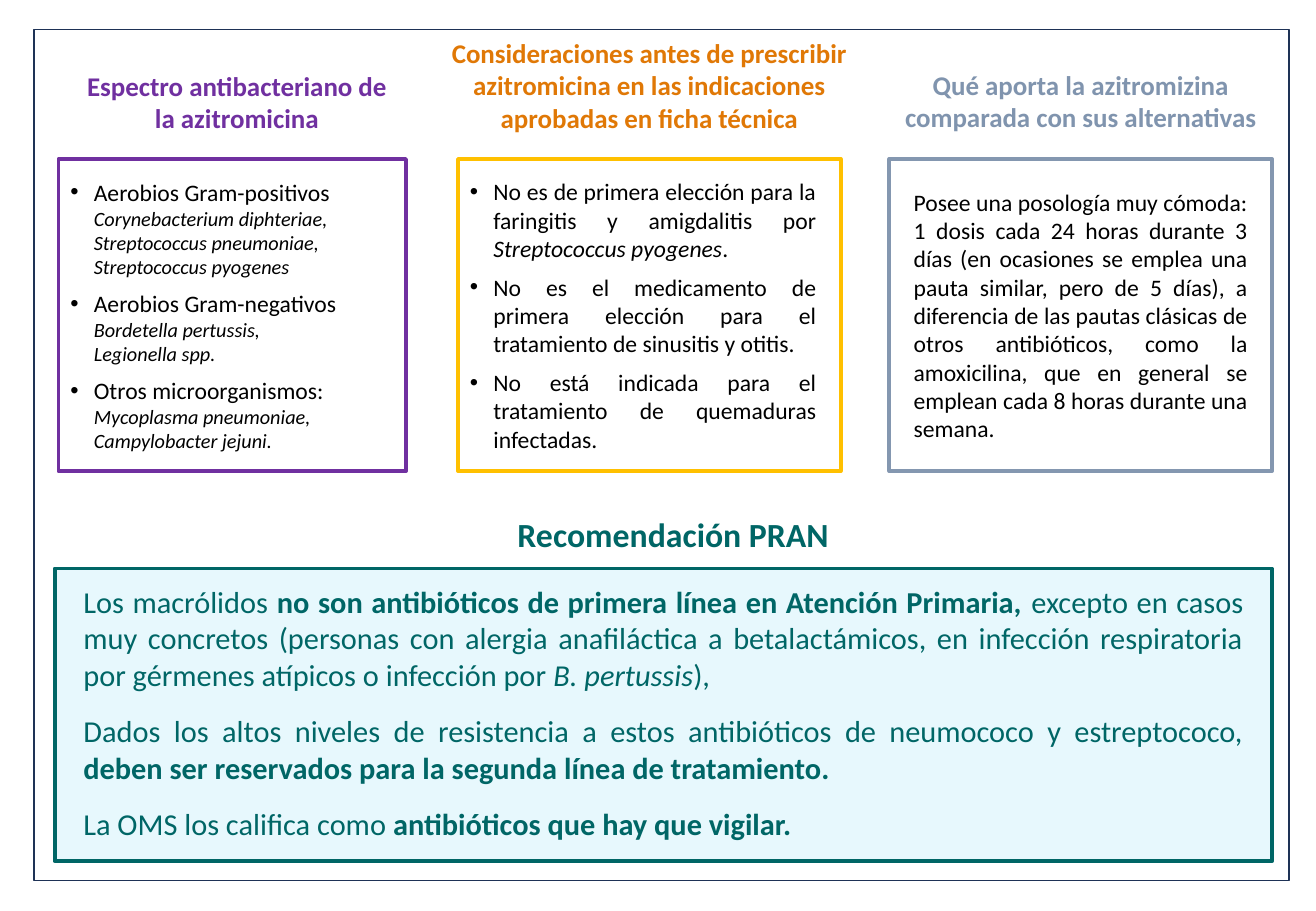
from dataclasses import dataclass

from lxml.etree import SubElement
from pptx import Presentation
from pptx.dml.color import RGBColor
from pptx.enum.shapes import MSO_SHAPE as Shape
from pptx.enum.text import MSO_ANCHOR as Anchor, MSO_AUTO_SIZE as AutoSize, PP_ALIGN as Align
from pptx.oxml.ns import qn
from pptx.util import Pt

WHITE = RGBColor(0xFF, 0xFF, 0xFF)
BLACK = RGBColor(0x00, 0x00, 0x00)
NAVY = RGBColor(0x1E, 0x32, 0x56)
TEAL = RGBColor(0x00, 0x66, 0x66)
PALE_BLUE = RGBColor(0xE7, 0xF8, 0xFD)
PURPLE = RGBColor(0x70, 0x30, 0xA0)
GOLD = RGBColor(0xFF, 0xC0, 0x00)
ORANGE = RGBColor(0xE0, 0x78, 0x06)
GREY_BLUE = RGBColor(0x84, 0x97, 0xB0)
GREY_TITLE = RGBColor(0x80, 0x94, 0xAE)

BOX_TOP, BOX_HEIGHT = 94.3, 185
INDENT = 13.9


@dataclass
class Run:
    """A piece of text with its own emphasis or size."""
    text: str
    bold: bool = None
    italic: bool = None
    size: float = None


@dataclass
class Block:
    """A paragraph made of runs, with its spacing and indent."""
    runs: list
    before: float = 0
    after: float = 0
    indent: float = 0
    bullet: bool = False


class SlideBuilder:
    """Draws styled elements on one slide."""

    def __init__(self, slide, font_name="Calibri"):
        self.slide = slide
        self.font_name = font_name

    def box(self, left, top, width, height, line, fill=WHITE, weight=2.25):
        shape = self.slide.shapes.add_shape(
            Shape.RECTANGLE, Pt(left), Pt(top), Pt(width), Pt(height))
        shape.shadow.inherit = False
        shape.fill.solid()
        shape.fill.fore_color.rgb = fill
        shape.line.color.rgb = line
        shape.line.width = Pt(weight)
        return shape

    def title(self, text, left, top, width, height, color, size=16):
        shape = self.slide.shapes.add_textbox(Pt(left), Pt(top), Pt(width), Pt(height))
        self.set_text(shape, [Block([Run(text)])], size, color, Align.CENTER, bold=True)
        shape.text_frame.auto_size = AutoSize.SHAPE_TO_FIT_TEXT

    def set_text(self, shape, blocks, size, color, align, anchor=Anchor.TOP,
                 insets=(7.2, 3.6, 7.2, 3.6), bold=None):
        frame = shape.text_frame
        frame.word_wrap = True
        frame.vertical_anchor = anchor
        (frame.margin_left, frame.margin_top,
         frame.margin_right, frame.margin_bottom) = map(Pt, insets)
        for index, block in enumerate(blocks):
            paragraph = frame.add_paragraph() if index else frame.paragraphs[0]
            paragraph.alignment = align
            paragraph.space_before, paragraph.space_after = Pt(block.before), Pt(block.after)
            self.indent(paragraph, block)
            paragraph.font.name = self.font_name
            paragraph.font.size = Pt(size)
            paragraph.font.bold = bold
            paragraph.font.color.rgb = color
            for piece in block.runs:
                self.run(paragraph, piece)

    def indent(self, paragraph, block):
        properties = paragraph._p.get_or_add_pPr()
        properties.set("marL", str(Pt(block.indent)))
        properties.set("indent", str(-Pt(block.indent) if block.bullet else 0))
        if block.bullet:
            SubElement(properties, qn("a:buFont"), typeface="Arial")
            SubElement(properties, qn("a:buChar"), char="•")

    def run(self, paragraph, piece):
        for index, line in enumerate(piece.text.split("\n")):
            if index:
                paragraph.add_line_break()
            if line:
                run = paragraph.add_run()
                run.text = line
                run.font.bold, run.font.italic = piece.bold, piece.italic
                if piece.size:
                    run.font.size = Pt(piece.size)


def species(text):
    return Run(text, italic=True, size=12)


def bullet(*runs, before=0, after=6):
    return Block(list(runs), before, after, INDENT, True)


RECOMMENDATION = [
    Block([
        Run("Los macrólidos "),
        Run("no son antibióticos de primera línea en Atención Primaria, ", bold=True),
        Run("excepto en casos muy concretos (personas con alergia anafiláctica a "
            "betalactámicos, en infección respiratoria por gérmenes atípicos o infección por "),
        Run("B. pertussis", italic=True),
        Run("), ")], before=12),
    Block([
        Run("Dados los altos niveles de resistencia a estos antibióticos de neumococo "
            "y estreptococo, "),
        Run("deben ser reservados para la segunda línea de tratamiento.", bold=True)], before=12),
    Block([
        Run("La OMS los califica como "),
        Run("antibióticos que hay que vigilar.", bold=True)], before=12),
]

SPECTRUM = [
    bullet(Run("Aerobios Gram-positivos "),
           species("Corynebacterium diphteriae, Streptococcus pneumoniae, "
                   "Streptococcus pyogenes")),
    bullet(Run("Aerobios Gram-negativos\n"), species("Bordetella pertussis,"), after=0),
    Block([species("Legionella spp.")], indent=INDENT),
    bullet(Run("Otros microorganismos: "),
           species("Mycoplasma pneumoniae, Campylobacter jejuni."), before=6),
]

CONSIDERATIONS = [
    bullet(Run("No es de primera elección para la faringitis y amigdalitis por "),
           Run("Streptococcus pyogenes", italic=True), Run(". "), before=12),
    bullet(Run("No es el medicamento de primera elección para el tratamiento de "
               "sinusitis y otitis. ")),
    bullet(Run("No está indicada para el tratamiento de quemaduras infectadas. ")),
]

ADVANTAGES = [
    Block([Run("Posee una posología muy cómoda: ")]),
    Block([Run("1 dosis cada 24 horas durante 3 días (en ocasiones se emplea una pauta similar, "
               "pero de 5 días), a diferencia de las pautas clásicas de otros antibióticos, "
               "como la amoxicilina, que en general se emplean cada 8 horas durante una "
               "semana. ")]),
]

COLUMNS = [
    (34.6, 206, PURPLE, SPECTRUM, Align.LEFT, 7.2, 7.2),
    (271.4, 226.8, GOLD, CONSIDERATIONS, Align.JUSTIFY, 7.2, 14.4),
    (527, 226.8, GREY_BLUE, ADVANTAGES, Align.JUSTIFY, 14.4, 14.4),
]

TITLES = [
    ("Espectro antibacteriano de la azitromicina", 37.4, 37.4, 206, 46, PURPLE),
    ("Consideraciones antes de prescribir azitromicina en las indicaciones "
     "aprobadas en ficha técnica", 252.7, 18, 264.2, 65.5, ORANGE),
    ("Qué aporta la azitromizina comparada con sus alternativas",
     527, 37, 226.8, 46, GREY_TITLE),
]


def main():
    presentation = Presentation()
    presentation.slide_width, presentation.slide_height = Pt(779.8), Pt(540)
    builder = SlideBuilder(presentation.slides.add_slide(presentation.slide_layouts[6]))

    builder.box(20, 17.4, 744, 504.6, NAVY, weight=1)
    recommendation = builder.box(32.4, 337, 721.4, 173.5, TEAL, PALE_BLUE)
    builder.set_text(recommendation, RECOMMENDATION, 18, TEAL, Align.JUSTIFY,
                     insets=(17, 8.5, 17, 14.2))
    for left, width, color, blocks, align, inset_left, inset_right in COLUMNS:
        column = builder.box(left, BOX_TOP, width, BOX_HEIGHT, color)
        builder.set_text(column, blocks, 14, BLACK, align, Anchor.MIDDLE,
                         (inset_left, 3.6, inset_right, 3.6))
    for title in TITLES:
        builder.title(*title)
    builder.title("Recomendación PRAN", 34.6, 301, 728.6, 31.5, TEAL, size=20)
    presentation.save("out.pptx")


if __name__ == "__main__":
    main()
